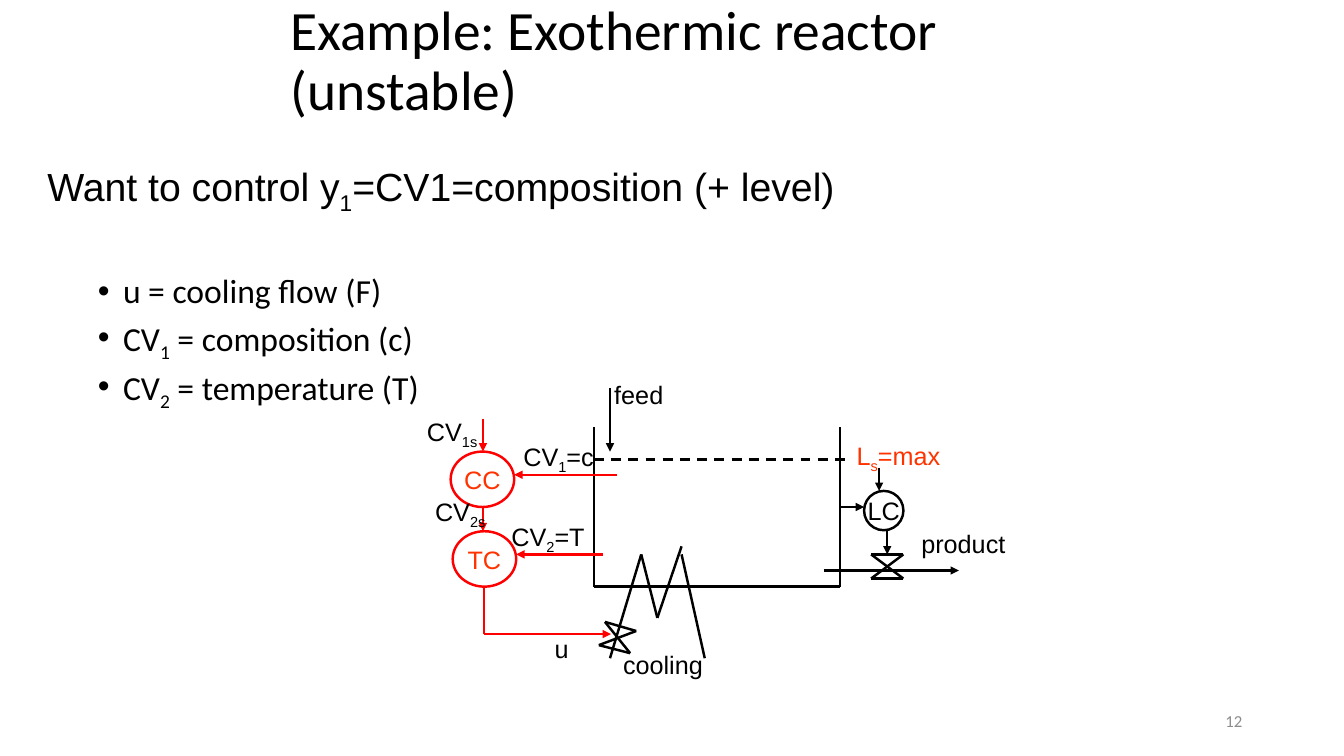
from itertools import pairwise

from lxml.etree import SubElement
from pptx import Presentation
from pptx.dml.color import RGBColor
from pptx.enum.dml import MSO_LINE
from pptx.enum.shapes import MSO_CONNECTOR, MSO_SHAPE
from pptx.enum.text import MSO_ANCHOR, MSO_AUTO_SIZE, PP_ALIGN
from pptx.oxml.ns import qn
from pptx.util import Inches, Pt

BLACK = RGBColor(0x00, 0x00, 0x00)
WHITE = RGBColor(0xFF, 0xFF, 0xFF)
RED = RGBColor(0xFF, 0x00, 0x00)
ORANGE = RGBColor(0xFF, 0x33, 0x00)
GRAY = RGBColor(0x8C, 0x8C, 0x8C)


def write(paragraph, parts, size, font="Arial", color=BLACK, align=PP_ALIGN.CENTER):
    """Fill a paragraph with parts, every second one a subscript."""
    for index, part in enumerate(parts):
        run = paragraph.add_run()
        run.text = part
        if index % 2:
            run.font._element.set("baseline", "-25000")
    paragraph.alignment = align
    paragraph.font.name = font
    paragraph.font.size = Pt(size)
    paragraph.font.color.rgb = color


def place(shape, left, top, width, height):
    """Move a shape to a box given in inches."""
    shape.left, shape.top = Inches(left), Inches(top)
    shape.width, shape.height = Inches(width), Inches(height)


def add_line(slide, start, end, color=BLACK, arrow=False, dashed=False):
    """Draw a straight line, with an arrowhead at its end if wanted."""
    ends = [Inches(value) for value in (*start, *end)]
    connector = slide.shapes.add_connector(MSO_CONNECTOR.STRAIGHT, *ends)
    connector.line.color.rgb = color
    connector.line.width = Pt(1.75)
    if dashed:
        connector.line.dash_style = MSO_LINE.DASH
    if arrow:
        SubElement(connector.line._get_or_add_ln(), qn("a:tailEnd"), type="triangle")
    SubElement(connector._element.spPr, qn("a:effectLst"))


def add_polyline(slide, points, color=BLACK):
    """Join consecutive points with lines."""
    for start, end in pairwise(points):
        add_line(slide, start, end, color)


def add_label(slide, left, top, width, *parts, color=BLACK):
    """Add a centred one-line label."""
    label = slide.shapes.add_textbox(Inches(left), Inches(top), Inches(width), Inches(0.4))
    label.text_frame.word_wrap = False
    label.text_frame.auto_size = MSO_AUTO_SIZE.SHAPE_TO_FIT_TEXT
    write(label.text_frame.paragraphs[0], parts, 18, color=color)


def add_controller(slide, left, top, width, height, name, outline, color):
    """Draw a controller as an ellipse with its name."""
    box = [Inches(value) for value in (left, top, width, height)]
    controller = slide.shapes.add_shape(MSO_SHAPE.OVAL, *box)
    controller.shadow.inherit = False
    controller.fill.solid()
    controller.fill.fore_color.rgb = WHITE
    controller.line.color.rgb = outline
    controller.line.width = Pt(1.75)
    controller.text_frame.word_wrap = False
    controller.text_frame.vertical_anchor = MSO_ANCHOR.MIDDLE
    write(controller.text_frame.paragraphs[0], [name], 18, color=color)


def add_title(slide, left, top, width, height):
    """Fill the title placeholder."""
    title = slide.shapes.title
    place(title, left, top, width, height)
    title.text_frame.auto_size = MSO_AUTO_SIZE.NONE
    title.text_frame.vertical_anchor = MSO_ANCHOR.MIDDLE
    paragraph = title.text_frame.paragraphs[0]
    paragraph.line_spacing = 0.9
    write(paragraph, ["Example: Exothermic reactor (unstable)"], 39.6, "Calibri", align=PP_ALIGN.LEFT)


def add_body(slide, left, top, width, height):
    """Fill the body placeholder with the aim and the variables."""
    body = slide.placeholders[1]
    place(body, left, top, width, height)
    frame = body.text_frame
    frame.auto_size = MSO_AUTO_SIZE.NONE
    aim = frame.paragraphs[0]
    properties = aim._p.get_or_add_pPr()
    properties.set("marL", "0")
    properties.set("indent", "0")
    SubElement(properties, qn("a:buNone"))
    aim.line_spacing = 0.9
    aim.space_before = Pt(10)
    write(aim, ["Want to control y", "1", "=CV1=composition (+ level)"], 28, align=PP_ALIGN.LEFT)
    variables = [
        (["u = cooling flow (F)"], 45),
        (["CV", "1", " = composition (c)"], 5.5),
        (["CV", "2", " = temperature (T)"], 5.5),
    ]
    for parts, gap in variables:
        paragraph = frame.add_paragraph()
        paragraph.level = 1
        properties = paragraph._p.get_or_add_pPr()
        properties.set("marL", str(Inches(0.75)))
        properties.set("indent", str(Inches(-0.25)))
        SubElement(properties, qn("a:buFont"), typeface="Arial")
        SubElement(properties, qn("a:buChar"), char="•")
        paragraph.line_spacing = 0.9
        paragraph.space_before = Pt(gap)
        write(paragraph, parts, 24, "Calibri", align=PP_ALIGN.LEFT)


def add_tank(slide, left, top, width, height):
    """Draw the open tank with its liquid level, feed and product flow."""
    right, bottom = left + width, top + height
    add_polyline(slide, [(left, top), (left, bottom), (right, bottom), (right, top)])
    add_line(slide, (left, top + 0.32), (right + 0.08, top + 0.32), dashed=True)
    add_line(slide, (left + 0.16, top - 0.39), (left + 0.16, top + 0.24), arrow=True)
    add_line(slide, (right - 0.16, bottom - 0.16), (right + 1.18, bottom - 0.16), arrow=True)
    add_label(slide, left + 0.1, top - 0.53, 0.69, "feed")
    add_label(slide, right + 0.66, bottom - 0.63, 1.13, "product")


def add_cooling(slide, left, top):
    """Draw the cooling coil and its valve."""
    coil = [(0.11, 1.11), (0.42, 0.08), (0.58, 0.71), (0.82, 0)]
    valve = [(0.06, 0.75), (0.37, 0.84), (0, 0.98), (0.31, 1.06), (0.06, 0.75)]
    outlet = [(0.82, 0.08), (1.05, 1.11)]
    for points in (coil, outlet, valve):
        add_polyline(slide, [(left + x, top + y) for x, y in points])
    add_label(slide, left + 0.14, top + 0.97, 0.99, "cooling")
    add_label(slide, left - 0.54, top + 0.81, 0.34, "u")


def add_cascade(slide, left, top):
    """Draw the composition controller above the temperature controller."""
    loops = [
        ("CC", 0, 0.32, 1.65, ("CV", "1", "=c"), 0.61, 0.92, ("CV", "1s"), -0.35),
        ("TC", 0.02, 0.24, 1.51, ("CV", "2", "=T"), 0.49, 0.95, ("CV", "2s"), -0.27),
    ]
    for row, (name, shift, drop, reach, signal, signal_left, width, setpoint, setpoint_left) in enumerate(loops):
        y = top + 0.79 * row
        x = left + shift
        add_line(slide, (left + 0.32, y - drop), (left + 0.32, y), RED, arrow=True)
        add_controller(slide, x, y, 0.63, 0.55, name, RED, ORANGE)
        add_line(slide, (left + reach, y + 0.23), (x + 0.63, y + 0.23), RED, arrow=True)
        add_label(slide, left + signal_left, y - 0.15, width, *signal)
        add_label(slide, left + setpoint_left, y - 0.4, 0.73, *setpoint)
    corner = (left + 0.33, top + 1.81)
    add_line(slide, (left + 0.33, top + 1.34), corner, RED)
    add_line(slide, corner, (left + 1.59, top + 1.81), RED, arrow=True)


def add_level_loop(slide, left, top):
    """Draw the level controller and the product valve below it."""
    add_controller(slide, left, top, 0.39, 0.39, "LC", BLACK, BLACK)
    valve = [(0.07, 0.63), (0.39, 0.63), (0.07, 0.87), (0.39, 0.87), (0.07, 0.63)]
    add_polyline(slide, [(left + x, top + y) for x, y in valve])
    add_line(slide, (left - 0.24, top + 0.16), (left, top + 0.16), arrow=True)
    add_line(slide, (left + 0.23, top + 0.4), (left + 0.23, top + 0.63), arrow=True)
    add_line(slide, (left + 0.15, top - 0.23), (left + 0.15, top), arrow=True)
    add_label(slide, left - 0.18, top - 0.55, 1.04, "L", "s", "=max", color=ORANGE)


def add_slide_number(slide, left, top, width, height):
    """Write the slide number at the lower right."""
    number = slide.shapes.add_textbox(Inches(left), Inches(top), Inches(width), Inches(height))
    number.text_frame.word_wrap = True
    number.text_frame.vertical_anchor = MSO_ANCHOR.MIDDLE
    write(number.text_frame.paragraphs[0], ["12"], 12, "Calibri", GRAY, PP_ALIGN.RIGHT)


def main():
    """Build and save the presentation."""
    presentation = Presentation()
    presentation.slide_width, presentation.slide_height = Inches(13.33), Inches(7.5)
    slide = presentation.slides.add_slide(presentation.slide_layouts[1])
    add_title(slide, 2.78, 0.3, 8.78, 0.64)
    add_body(slide, 0.37, 1.57, 11.5, 4.76)
    add_tank(slide, 5.89, 4.24, 2.44, 1.58)
    add_cooling(slide, 5.94, 5.42)
    add_cascade(slide, 4.47, 4.48)
    add_level_loop(slide, 8.57, 4.87)
    add_slide_number(slide, 9.42, 6.95, 3, 0.4)
    presentation.save("out.pptx")


if __name__ == "__main__":
    main()
